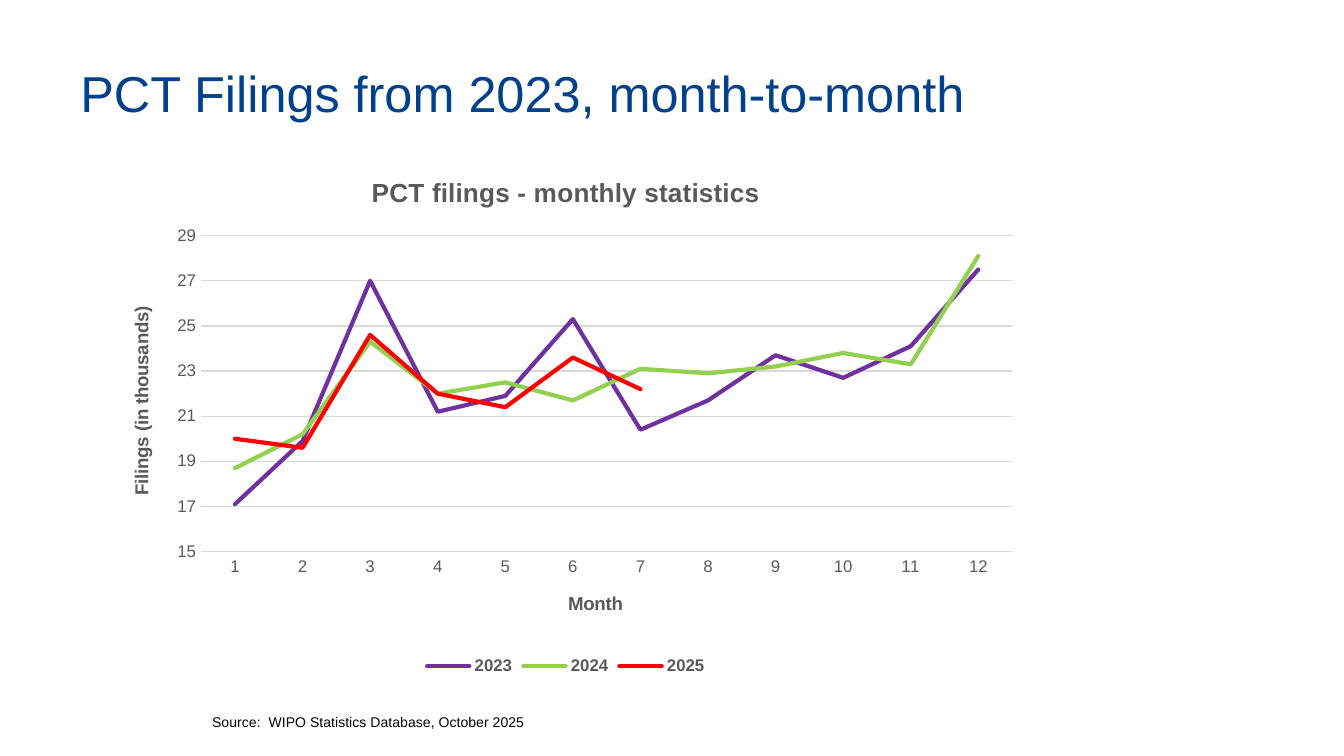
"""Build a slide with a line chart of monthly PCT filings."""
from typing import NamedTuple, Optional

from lxml import etree
from pptx import Presentation
from pptx import util as u
from pptx.chart.data import CategoryChartData
from pptx.dml.color import RGBColor
from pptx.enum import chart as ch, text
from pptx.oxml.ns import qn

FONT = "Arial"
GREY = "595959"
GRID = "D9D9D9"


class Box(NamedTuple):
    left: float
    top: float
    width: float
    height: float


class Year(NamedTuple):
    name: str
    color: str
    filings: list[Optional[float]]


YEARS = [
    Year("2023", "7030A0",
         [17.1, 19.9, 27, 21.2, 21.9, 25.3, 20.4, 21.7, 23.7, 22.7, 24.1, 27.5]),
    Year("2024", "92D050",
         [18.7, 20.2, 24.3, 22, 22.5, 21.7, 23.1, 22.9, 23.2, 23.8, 23.3, 28.1]),
    Year("2025", "FF0000", [20, 19.6, 24.6, 22, 21.4, 23.6, 22.2] + [None] * 5),
]


def rgb(value: str) -> RGBColor:
    return RGBColor.from_string(value)


def style_font(font, *, size: float, color: str, bold: bool = False) -> None:
    font.name, font.size, font.bold = FONT, u.Pt(size), bold
    font.color.rgb = rgb(color)


def write(frame, words: str, *, size: float, color: str, bold: bool = False) -> None:
    run = frame.paragraphs[0].add_run()
    run.text = words
    style_font(run.font, size=size, color=color, bold=bold)


def add_text(slide, box: Box, words: str, *, size: float, color: str,
             anchor=text.MSO_ANCHOR.TOP) -> None:
    frame = slide.shapes.add_textbox(*map(u.Inches, box)).text_frame
    frame.word_wrap = True
    frame.vertical_anchor = anchor
    write(frame, words, size=size, color=color)


def style_line(line, color: str, width: float) -> None:
    line.color.rgb = rgb(color)
    line.width = u.Pt(width)


def place(parent, index: int, modes: dict[str, str], **percents: float) -> None:
    """Give a chart part a manual layout, in percent of the chart."""
    for old in parent.findall(qn("c:layout")):
        parent.remove(old)
    layout = etree.Element(qn("c:layout"))
    manual = etree.SubElement(layout, qn("c:manualLayout"))
    shares = {tag: f"{percent / 100:.3f}" for tag, percent in percents.items()}
    for tag, value in {**modes, "xMode": "edge", "yMode": "edge", **shares}.items():
        etree.SubElement(manual, qn(f"c:{tag}")).set("val", value)
    parent.insert(index, layout)


def add_chart_title(title, words: str, size: float, x: float, y: float) -> None:
    write(title.text_frame, words, size=size, color=GREY, bold=True)
    place(title._element, 1, {}, x=x, y=y)


def style_axis(axis, words: str, x: float, y: float) -> None:
    axis.major_tick_mark = axis.minor_tick_mark = ch.XL_TICK_MARK.NONE
    style_font(axis.tick_labels.font, size=9, color=GREY)
    add_chart_title(axis.axis_title, words, 10, x, y)


def add_filings_chart(slide, box: Box) -> None:
    data = CategoryChartData(number_format="0.0")
    data.categories = [str(month) for month in range(1, 13)]
    for year in YEARS:
        data.add_series(year.name, year.filings)
    chart = slide.shapes.add_chart(
        ch.XL_CHART_TYPE.LINE, *map(u.Inches, box), data).chart
    style_font(chart.font, size=10, color="000000")
    add_chart_title(chart.chart_title, "PCT filings - monthly statistics", 14, 28.6, 3.1)

    months, filings = chart.category_axis, chart.value_axis
    style_axis(months, "Month", 49.9, 82.2)
    style_line(months.format.line, GRID, 0.75)
    style_axis(filings, "Filings (in thousands)", 2.7, 28.2)
    filings.format.line.fill.background()
    filings.minimum_scale, filings.maximum_scale, filings.major_unit = 15, 29, 2
    filings.tick_labels.number_format = "#,##0"
    filings.tick_labels.number_format_is_linked = False
    style_line(filings.major_gridlines.format.line, GRID, 0.75)

    chart.plots[0].vary_by_categories = False
    for series, year in zip(chart.plots[0].series, YEARS):
        series.smooth = False
        series.marker.style = ch.XL_MARKER_STYLE.NONE
        style_line(series.format.line, year.color, 2.25)
        series.format.line._get_or_add_ln().set("cap", "rnd")

    chart.has_legend = True
    chart.legend.position = ch.XL_LEGEND_POSITION.BOTTOM
    chart.legend.include_in_layout = False
    style_font(chart.legend.font, size=9, color=GREY, bold=True)
    place(chart._chartSpace.chart.plotArea, 0, {"layoutTarget": "inner"},
          x=10.8, y=15.4, w=87.2, h=60)


def main() -> None:
    deck = Presentation()
    deck.slide_width = u.Inches(10)
    deck.slide_height = deck.slide_width * 9 // 16
    slide = deck.slides.add_slide(deck.slide_layouts[6])
    add_text(slide, Box(0.5, 0.22, 9, 0.94), "PCT Filings from 2023, month-to-month",
             size=27, color="00408C", anchor=text.MSO_ANCHOR.MIDDLE)
    add_filings_chart(slide, Box(0.75, 1.15, 6.92, 3.92))
    add_text(slide, Box(1.48, 5.26, 4.23, 0.23),
             "Source:  WIPO Statistics Database, October 2025", size=7.5, color="000000")
    deck.save("out.pptx")


if __name__ == "__main__":
    main()
